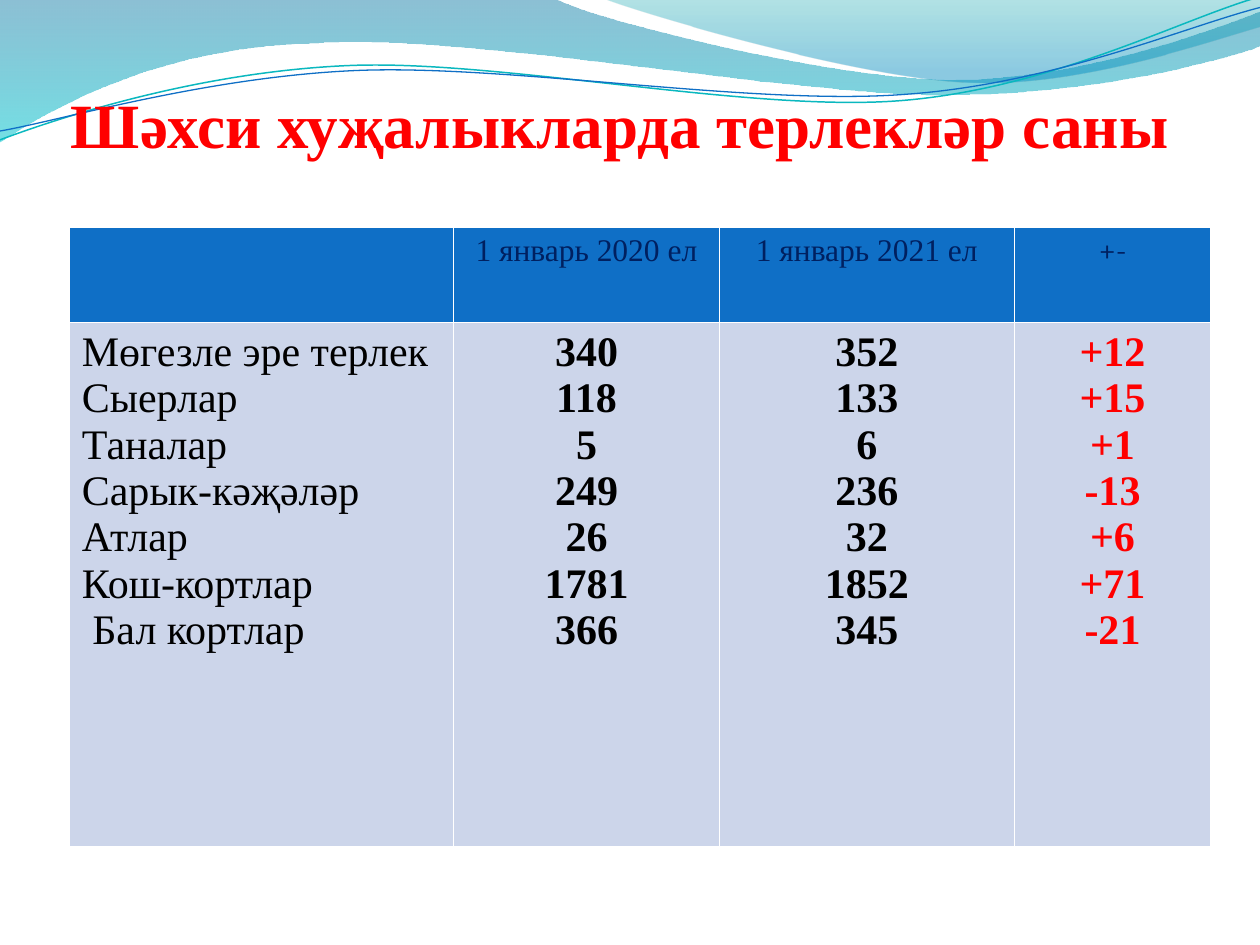
"""Build a slide comparing livestock numbers in private households."""
import math
from dataclasses import dataclass

import lxml.etree
import pptx
import pptx.dml.color
import pptx.enum.text
import pptx.oxml.ns
import pptx.util

Inches = pptx.util.Inches
Pt = pptx.util.Pt
RGB = pptx.dml.color.RGBColor.from_string
qn = pptx.oxml.ns.qn
ALIGN = pptx.enum.text.PP_ALIGN


@dataclass(frozen=True)
class Theme:
    font: str = "Times New Roman"
    sign_font: str = "Cambria"
    accent: str = "FF0000"
    ink: str = "000000"
    header_ink: str = "002060"
    header_fill: str = "0F6FC6"
    body_fill: str = "CCD5EA"
    border: str = "FFFFFF"
    teal_line: str = "0AB8BF"
    blue_line: str = "0F6FC6"
    title_size: int = 36
    header_size: int = 18
    body_size: int = 24


THEME = Theme()
TITLE = "Шәхси хуҗалыкларда терлекләр саны"
HEADERS = ["", "1 январь 2020 ел", "1 январь 2021 ел", "+-"]
LIVESTOCK = [
    ("Мөгезле эре терлек", 340, 352),
    ("Сыерлар", 118, 133),
    ("Таналар", 5, 6),
    ("Сарык-кәҗәләр", 249, 236),
    ("Атлар", 26, 32),
    ("Кош-кортлар", 1781, 1852),
    (" Бал кортлар", 366, 345),
]
COLUMN_WIDTHS = [3.05, 2.11, 2.34, 1.56]
ROW_HEIGHTS = [0.76, 4.16]
CURVE_TILT = 2.7

WIDE_WAVE = [
    (0, 0), (4.4, -0.01),
    (4.76, 0.17, 6.64, 0.63, 7.58, 0.63), (8.53, 0.63, 9.58, 0.26, 10, 0.09),
    (10.01, 0.36),
    (9.83, 0.44, 8.7, 0.76, 7.46, 0.75), (6.22, 0.75, 3.82, 0.28, 2.57, 0.34),
    (1.29, 0.36, 0.46, 0.83, -0.01, 1.13),
]
RIGHT_WAVE = [
    (4.79, -0.01),
    (5.09, 0.11, 6.82, 0.62, 7.69, 0.65), (8.56, 0.69, 9.61, 0.32, 10, 0.21),
    (10, 0),
]
TEAL_CURVE = [
    (0, 1.11),
    (0.48, 0.93, 1.58, 0.57, 2.77, 0.52), (3.95, 0.47, 5.93, 0.89, 7.13, 0.8),
    (8.33, 0.71, 9.38, 0.15, 9.98, -0.02),
]
BLUE_CURVE = [
    (0, 1.04),
    (0.47, 0.96, 1.64, 0.61, 2.83, 0.56), (4.03, 0.51, 5.97, 0.84, 7.17, 0.75),
    (8.36, 0.67, 9.41, 0.21, 10, 0.06),
]


def turn(segments, center, degrees):
    """Turn every point of the segments clockwise about a center."""
    cos, sin = math.cos(math.radians(degrees)), math.sin(math.radians(degrees))
    turned = []
    for segment in segments:
        offsets = [(x - center[0], y - center[1]) for x, y in zip(segment[::2], segment[1::2])]
        turned.append([value for x, y in offsets for value in (
            center[0] + x * cos - y * sin, center[1] + x * sin + y * cos)])
    return turned


def add_outline(page, segments, close):
    """Add a freeform of straight and cubic segments."""
    start, *points = [
        (Inches(x), Inches(y))
        for segment in segments for x, y in zip(segment[::2], segment[1::2])
    ]
    builder = page.shapes.build_freeform(*start)
    builder.add_line_segments(points, close=close)
    shape = builder.convert_to_shape()
    shape.shadow.inherit = False
    steps = iter(list(shape._element.spPr.iter(qn("a:lnTo"))))
    for segment in segments[1:]:
        step = next(steps)
        if len(segment) == 6:
            step.addprevious(curve := step.makeelement(qn("a:cubicBezTo")))
            for part in (step, next(steps), next(steps)):
                curve.append(part[0])
                part.getparent().remove(part)
    return shape


def add_wave(page, segments, stops):
    """Add a wave with a translucent gradient from top to bottom."""
    shape = add_outline(page, segments, True)
    shape.line.fill.background()
    shape.fill.gradient()
    shape.fill.gradient_angle = 270
    for stop, (position, color, _) in zip(shape.fill.gradient_stops, stops):
        stop.position = position
        stop.color.rgb = RGB(color)
    colors = shape._element.spPr.iter(qn("a:srgbClr"))
    for element, (_, _, opacity) in zip(list(colors), stops):
        lxml.etree.SubElement(element, qn("a:alpha"), val=str(opacity * 1000))


def add_curve(page, segments, center, color, width):
    """Add a thin open curve, drawn level and then tilted."""
    shape = add_outline(page, turn(segments, center, CURVE_TILT), False)
    shape.rotation = 360 - CURVE_TILT
    shape.fill.background()
    shape.line.color.rgb = RGB(color)
    shape.line.width = Pt(width)


def write_paragraph(para, text, size, color, bold=False, align=ALIGN.CENTER, font=THEME.font):
    """Fill a paragraph with formatted text."""
    para.text = text
    para.alignment = align
    para.font.name = font
    para.font.size = Pt(size)
    para.font.bold = bold
    para.font.color.rgb = RGB(color)


def place_title(page):
    """Move the title placeholder to the front and format it."""
    box = page.shapes.title
    page.shapes._spTree.append(box._element)
    box.left, box.top, box.width, box.height = map(Inches, (0.23, 0.62, 9.38, 0.71))
    frame = box.text_frame
    frame.auto_size = pptx.enum.text.MSO_AUTO_SIZE.NONE
    frame.vertical_anchor = pptx.enum.text.MSO_ANCHOR.BOTTOM
    write_paragraph(frame.paragraphs[0], TITLE, THEME.title_size, THEME.accent, True)


def style_cell(cell, fill):
    """Give a cell thin borders and a solid fill."""
    properties = cell._tc.get_or_add_tcPr()
    for side in ("a:lnL", "a:lnR", "a:lnT", "a:lnB"):
        line = lxml.etree.SubElement(properties, qn(side), w=str(Pt(1)))
        solid = lxml.etree.SubElement(line, qn("a:solidFill"))
        lxml.etree.SubElement(solid, qn("a:srgbClr"), val=THEME.border)
    cell.fill.solid()
    cell.fill.fore_color.rgb = RGB(fill)


def fill_column(cell, lines, **style):
    """Write one paragraph per line into a body cell."""
    frame = cell.text_frame
    for index, line in enumerate(lines):
        para = frame.add_paragraph() if index else frame.paragraphs[0]
        write_paragraph(para, line, THEME.body_size, **style)


def add_livestock_table(page):
    """Add the table of livestock counts and their changes."""
    table = page.shapes.add_table(
        len(ROW_HEIGHTS), len(COLUMN_WIDTHS), Inches(0.55), Inches(1.8),
        Inches(sum(COLUMN_WIDTHS)), Inches(sum(ROW_HEIGHTS)),
    ).table
    for column, width in zip(table.columns, COLUMN_WIDTHS):
        column.width = Inches(width)
    for row, height, fill in zip(table.rows, ROW_HEIGHTS, (THEME.header_fill, THEME.body_fill)):
        row.height = Inches(height)
        for cell in row.cells:
            style_cell(cell, fill)
    fonts = [THEME.font] * 3 + [THEME.sign_font]
    for cell, text, font in zip(table.rows[0].cells, HEADERS, fonts):
        write_paragraph(cell.text_frame.paragraphs[0], text, THEME.header_size,
                        THEME.header_ink, font=font)
    names, before, after = zip(*LIVESTOCK)
    changes = [f"{new - old:+d}" for old, new in zip(before, after)]
    fill_column(table.cell(1, 0), names, color=THEME.ink, align=ALIGN.LEFT)
    fill_column(table.cell(1, 1), map(str, before), color=THEME.ink, bold=True)
    fill_column(table.cell(1, 2), map(str, after), color=THEME.ink, bold=True)
    fill_column(table.cell(1, 3), changes, color=THEME.accent, bold=True)


def main():
    """Build and save the slide."""
    deck = pptx.Presentation()
    deck.slide_width, deck.slide_height = Inches(10), Inches(7.5)
    page = deck.slides.add_slide(deck.slide_layouts[5])
    add_wave(page, WIDE_WAVE, [(0, "0074A1", 45), (1, "00C6CF", 55)])
    add_wave(page, RIGHT_WAVE, [(0, "00A1A9", 30), (0.8, "008BBF", 45)])
    add_curve(page, TEAL_CURVE, (4.99, 0.58), THEME.teal_line, 0.85)
    add_curve(page, BLUE_CURVE, (5, 0.59), THEME.blue_line, 0.75)
    place_title(page)
    add_livestock_table(page)
    deck.save("out.pptx")


if __name__ == "__main__":
    main()
